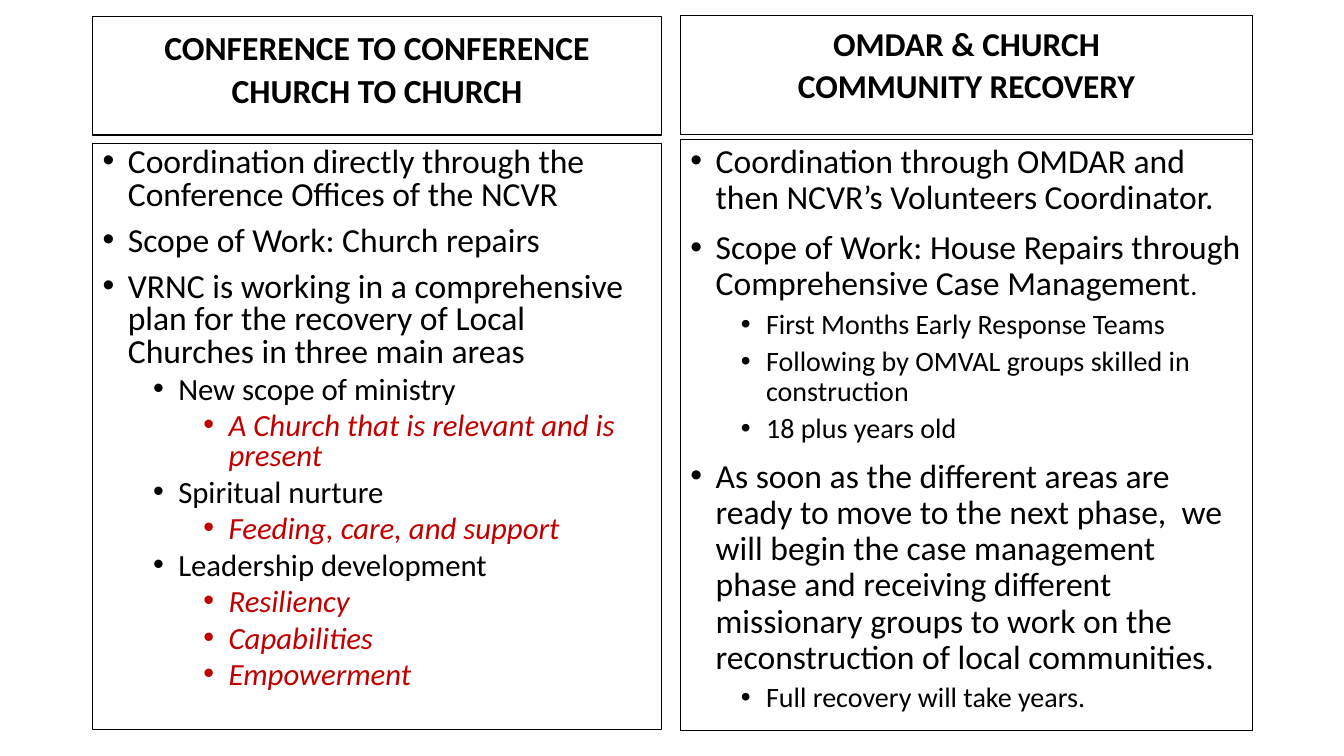
"""Build a two-column comparison slide of church recovery coordination."""
from dataclasses import dataclass

from lxml import etree
from pptx import Presentation
from pptx.dml.color import RGBColor
from pptx.enum.shapes import MSO_SHAPE
from pptx.enum.text import MSO_ANCHOR, PP_ALIGN
from pptx.oxml.ns import qn
from pptx.util import Inches, Pt

RECTANGLE = MSO_SHAPE.RECTANGLE
TOP, BOTTOM = MSO_ANCHOR.TOP, MSO_ANCHOR.BOTTOM
LEFT, CENTER = PP_ALIGN.LEFT, PP_ALIGN.CENTER


@dataclass(frozen=True)
class Theme:
    font: str = "Calibri"
    ink: RGBColor = RGBColor(0x00, 0x00, 0x00)
    accent: RGBColor = RGBColor(0xC0, 0x00, 0x00)
    border: float = 0.75
    main_size: float = 24
    period_size: float = 20
    heading_spacing: float = 0.7
    main_gap: float = 10
    sub_gap: float = 5


@dataclass(frozen=True)
class Area:
    left: float
    top: float
    width: float
    height: float


@dataclass(frozen=True)
class Item:
    text: str
    level: int = 0
    small_ending: str = ""


@dataclass(frozen=True)
class Column:
    heading_area: Area
    heading: tuple[str, ...]
    heading_size: float
    heading_inset: float
    body_area: Area
    items: tuple[Item, ...]
    sub_size: float
    line_spacing: float


THEME = Theme()

COLUMNS = (
    Column(
        Area(0.92, 0.16, 5.64, 1.18),
        ("CONFERENCE TO CONFERENCE", "CHURCH TO CHURCH"),
        24,
        0.26,
        Area(0.92, 1.42, 5.64, 5.82),
        (
            Item("Coordination directly through the Conference Offices of the NCVR"),
            Item("Scope of Work: Church repairs"),
            Item("VRNC is working in a comprehensive plan for the recovery of "
                 "Local Churches in three main areas"),
            Item("New scope of ministry", 1),
            Item("A Church that is relevant and is present", 2),
            Item("Spiritual nurture", 1),
            Item("Feeding, care, and support", 2),
            Item("Leadership development", 1),
            Item("Resiliency", 2),
            Item("Capabilities", 2),
            Item("Empowerment", 2),
        ),
        22,
        0.8,
    ),
    Column(
        Area(6.75, 0.15, 5.67, 1.18),
        ("OMDAR & CHURCH", "COMMUNITY RECOVERY"),
        23.8,
        0.3,
        Area(6.75, 1.38, 5.67, 5.87),
        (
            Item("Coordination through OMDAR and then NCVR’s Volunteers Coordinator."),
            Item("Scope of Work: House Repairs through Comprehensive Case Management",
                 small_ending="."),
            Item("First Months Early Response Teams", 1),
            Item("Following by OMVAL groups skilled in construction", 1),
            Item("18 plus years old", 1),
            Item("As soon as the different areas are ready to move to the next phase,  "
                 "we will begin the case management phase and receiving different "
                 "missionary groups to work on the reconstruction of local communities."),
            Item("Full recovery will take years.", 1),
        ),
        20,
        0.9,
    ),
)


def add_box(page, area: Area, anchor: MSO_ANCHOR):
    """Add an outlined, unfilled box and return its text frame."""
    box = page.shapes.add_shape(
        RECTANGLE, Inches(area.left), Inches(area.top), Inches(area.width), Inches(area.height)
    )
    box.shadow.inherit = False
    box.fill.background()
    box.line.color.rgb = THEME.ink
    box.line.width = Pt(THEME.border)
    box.text_frame.word_wrap = True
    box.text_frame.vertical_anchor = anchor
    return box.text_frame


def style_span(span, size: float, color: RGBColor, bold: bool = False, italic: bool = False) -> None:
    """Apply the theme font and the given look to a run."""
    span.font.name = THEME.font
    span.font.size = Pt(size)
    span.font.color.rgb = color
    span.font.bold = bold
    span.font.italic = italic


def add_bullet(para, level: int) -> None:
    """Give a paragraph a round bullet and the indent of its level."""
    properties = para._p.get_or_add_pPr()
    properties.set("marL", str(Inches(0.25 + 0.5 * level)))
    properties.set("indent", str(Inches(-0.25)))
    etree.SubElement(properties, qn("a:buFont")).set("typeface", "Arial")
    etree.SubElement(properties, qn("a:buChar")).set("char", "•")


def draw_heading(page, column: Column) -> None:
    """Draw the heading box of a column."""
    frame = add_box(page, column.heading_area, BOTTOM)
    frame.margin_bottom = Inches(column.heading_inset)
    frame.text = "\n".join(column.heading)
    for para in frame.paragraphs:
        para.alignment = CENTER
        para.line_spacing = THEME.heading_spacing
        para.space_before = Pt(THEME.main_gap)
        style_span(para.runs[0], column.heading_size, THEME.ink, bold=True)


def draw_body(page, column: Column) -> None:
    """Draw the bulleted box of a column."""
    frame = add_box(page, column.body_area, TOP)
    frame.text = "\n".join(item.text for item in column.items)
    for para, item in zip(frame.paragraphs, column.items):
        para.alignment = LEFT
        para.level = item.level
        para.line_spacing = column.line_spacing
        para.space_before = Pt(THEME.sub_gap if item.level else THEME.main_gap)
        add_bullet(para, item.level)
        detail = item.level == 2
        size = column.sub_size if item.level else THEME.main_size
        style_span(para.runs[0], size, THEME.accent if detail else THEME.ink, italic=detail)
        if item.small_ending:
            span = para.add_run()
            span.text = item.small_ending
            style_span(span, THEME.period_size, THEME.ink)


def main() -> None:
    """Build and save the deck."""
    deck = Presentation()
    deck.slide_width, deck.slide_height = Inches(13.33), Inches(7.5)
    page = deck.slides.add_slide(deck.slide_layouts[6])
    for column in COLUMNS:
        draw_heading(page, column)
        draw_body(page, column)
    deck.save("out.pptx")


if __name__ == "__main__":
    main()
